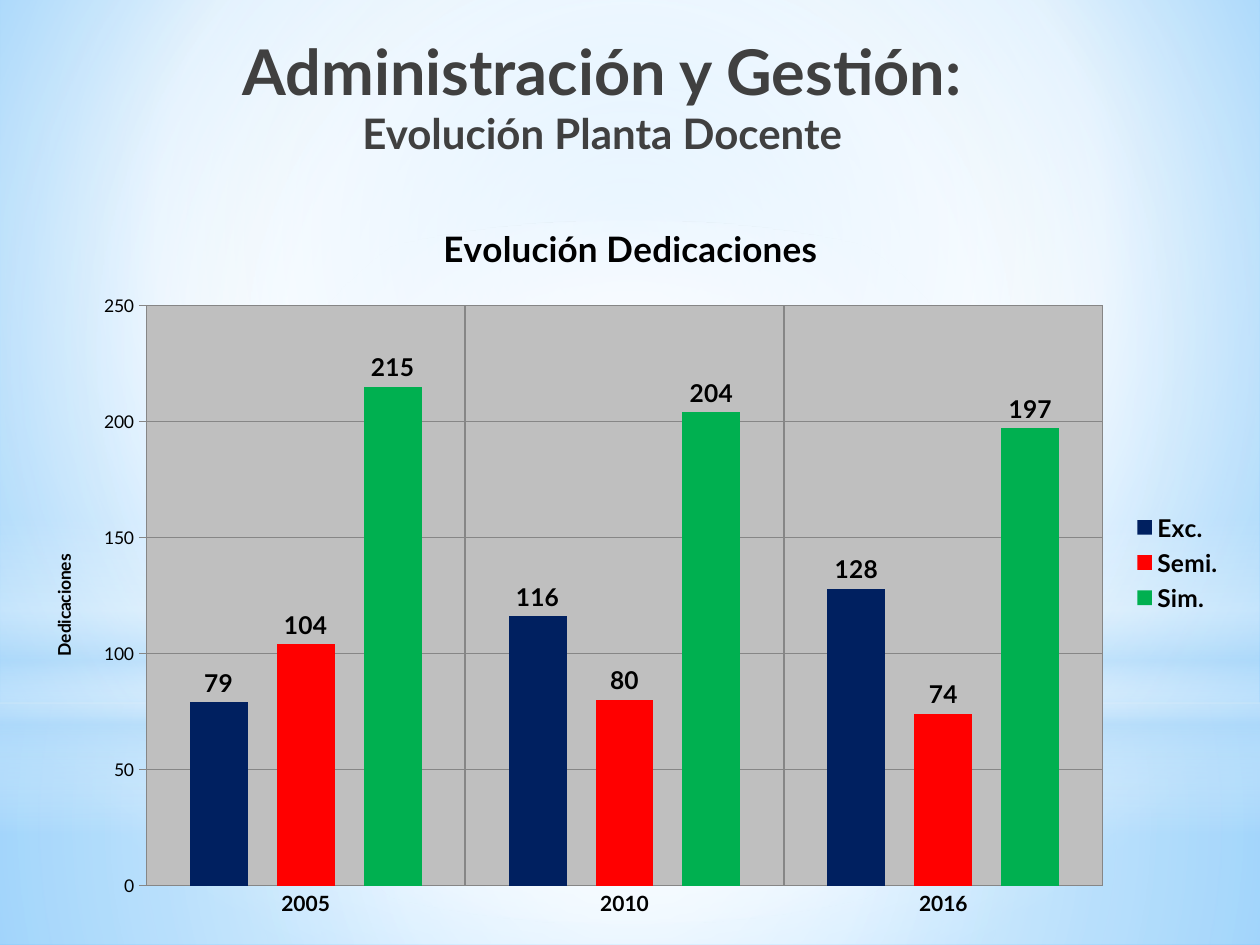
from lxml import etree
from pptx import Presentation
from pptx.chart.data import CategoryChartData
from pptx.dml.color import RGBColor
from pptx.enum import chart as ch, shapes, text
from pptx.oxml import parse_xml
from pptx.oxml.ns import nsdecls
from pptx.util import Inches, Pt

FONT = "Lato"
BLACK = RGBColor(0, 0, 0)
TITLE_GREY = RGBColor(0x40, 0x40, 0x40)
LINE_GREY = RGBColor(0x86, 0x86, 0x86)
NAVY = RGBColor(0x00, 0x20, 0x60)
RED = RGBColor(0xFF, 0, 0)
GREEN = RGBColor(0, 0xB0, 0x50)
CENTER = (50, 50, 50, 50)


def set_gradient(solid, stops, focus=None):
    """Replace a solid fill by (position, colour, opacity) stops; no focus means top to bottom."""
    gs = "".join(
        f'<a:gs pos="{pos * 1000}"><a:srgbClr val="{color}">'
        f'<a:alpha val="{alpha * 1000}"/></a:srgbClr></a:gs>'
        for pos, color, alpha in stops)
    if focus:
        l, t, r, b = (v * 1000 for v in focus)
        way = (f'<a:path path="circle"><a:fillToRect l="{l}" t="{t}" '
               f'r="{r}" b="{b}"/></a:path>')
    else:
        way = '<a:lin ang="5400000" scaled="0"/>'
    grad = parse_xml(f'<a:gradFill {nsdecls("a")} rotWithShape="1">'
                     f'<a:gsLst>{gs}</a:gsLst>{way}</a:gradFill>')
    solid.getparent().replace(solid, grad)


def set_font(font, size, bold=False, color=BLACK):
    font.name, font.size, font.bold = FONT, Pt(size), bold
    font.color.rgb = color


prs = Presentation()
prs.slide_width, prs.slide_height = Inches(10), Inches(7.5)
s = prs.slides.add_slide(prs.slide_layouts[6])

# Background and its soft light bands
s.background.fill.solid()
set_gradient(s.element.xpath(".//p:bgPr/a:solidFill")[0],
             [(0, "9ED5FF", 100), (60, "FFFFFF", 100), (100, "5BB9FF", 100)],
             (20, 10, 20, 60))
RECT, OVAL = shapes.MSO_SHAPE.RECTANGLE, shapes.MSO_SHAPE.OVAL
bands = [
    (RECT, 5.58, 1.92, CENTER,
     [(0, "FFFFFF", 91), (37, "FFFFFF", 76), (100, "B4DCFA", 79)]),
    (RECT, 0, 5.58, CENTER,
     [(0, "FFFFFF", 89), (48, "FFFFFF", 62), (100, "B4DCFA", 79)]),
    (RECT, 4.12, 2.5, None,
     [(0, "FFFFFF", 0), (29, "FFFFFF", 30), (45, "B4DCFA", 40),
      (55, "FFFFFF", 26), (65, "B4DCFA", 60), (100, "FFFFFF", 0)]),
    (OVAL, 1.75, 5.58, CENTER, [(0, "FFFFFF", 100), (56, "FFFFFF", 0)]),
]
for kind, top, height, focus, stops in bands:
    sp = s.shapes.add_shape(kind, 0, Inches(top), prs.slide_width, Inches(height))
    sp.shadow.inherit = False
    sp.line.fill.background()
    sp.fill.solid()
    set_gradient(sp.element.spPr.find("{*}solidFill"), stops, focus)

# Title
sp = s.shapes.add_textbox(Inches(1.22), Inches(0.13), Inches(7.12), Inches(1.25))
tf = sp.text_frame
tf.word_wrap = True
tf.vertical_anchor = text.MSO_ANCHOR.MIDDLE
p = tf.paragraphs[0]
p.alignment = text.PP_ALIGN.CENTER
r = p.add_run()
r.text = "Administración y Gestión:"
set_font(r.font, 36, True, TITLE_GREY)
p.add_line_break()
r = p.add_run()
r.text = "Evolución Planta Docente"
set_font(r.font, 24, True, TITLE_GREY)

# Chart
data = CategoryChartData()
data.categories = ["2005", "2010", "2016"]
data.add_series("Exc.", (79, 116, 128))
data.add_series("Semi.", (104, 80, 74))
data.add_series("Sim.", (215, 204, 197))
chart = s.shapes.add_chart(ch.XL_CHART_TYPE.COLUMN_CLUSTERED, Inches(0.2), Inches(1.55),
                           Inches(9.61), Inches(5.83), data).chart
set_font(chart.font, 10)

chart.has_title = True
r = chart.chart_title.text_frame.paragraphs[0].add_run()
r.text = "Evolución Dedicaciones"
set_font(r.font, 20, True)
chart.chart_title.include_in_layout = False

chart.has_legend = True
chart.legend.position = ch.XL_LEGEND_POSITION.RIGHT
chart.legend.include_in_layout = False
set_font(chart.legend.font, 14, True)

plot = chart.plots[0]
plot.gap_width, plot.overlap = 150, -50
plot.vary_by_categories = False
for series, color in zip(plot.series, (NAVY, RED, GREEN)):
    series.format.fill.solid()
    series.format.fill.fore_color.rgb = color
    labels = series.data_labels
    labels.show_value = True
    labels.position = ch.XL_LABEL_POSITION.OUTSIDE_END
    set_font(labels.font, 14, True)

cat, val = chart.category_axis, chart.value_axis
for axis in (cat, val):
    axis.has_major_gridlines = True
    for line in (axis.format.line, axis.major_gridlines.format.line):
        line.color.rgb = LINE_GREY
        line.width = Pt(0.75)
cat.major_tick_mark = ch.XL_TICK_MARK.NONE
set_font(cat.tick_labels.font, 12, True)
val.major_tick_mark = ch.XL_TICK_MARK.OUTSIDE
val.minimum_scale, val.maximum_scale, val.major_unit = 0, 250, 50
set_font(val.tick_labels.font, 10)
val.has_title = True
r = val.axis_title.text_frame.paragraphs[0].add_run()
r.text = "Dedicaciones"
set_font(r.font, 10, True)

# Plot area: fixed inner frame on grey
area = chart.element.xpath(".//c:plotArea")[0]
for old in area.findall("{*}layout"):
    area.remove(old)
layout = parse_xml(f'<c:layout {nsdecls("c")}><c:manualLayout/></c:layout>')
frame = [("layoutTarget", "inner"), ("xMode", "edge"), ("yMode", "edge"),
         ("x", "0.1"), ("y", "0.15"), ("w", "0.79"), ("h", "0.79")]
for tag, value in frame:
    etree.SubElement(layout[0], "{%s}%s" % (area.nsmap["c"], tag), val=value)
area.insert(0, layout)
area.append(parse_xml(
    f'<c:spPr {nsdecls("c", "a")}><a:solidFill><a:srgbClr val="BFBFBF"/></a:solidFill>'
    f'<a:ln w="9525"><a:solidFill><a:srgbClr val="{LINE_GREY}"/></a:solidFill></a:ln></c:spPr>'))

prs.save("out.pptx")
